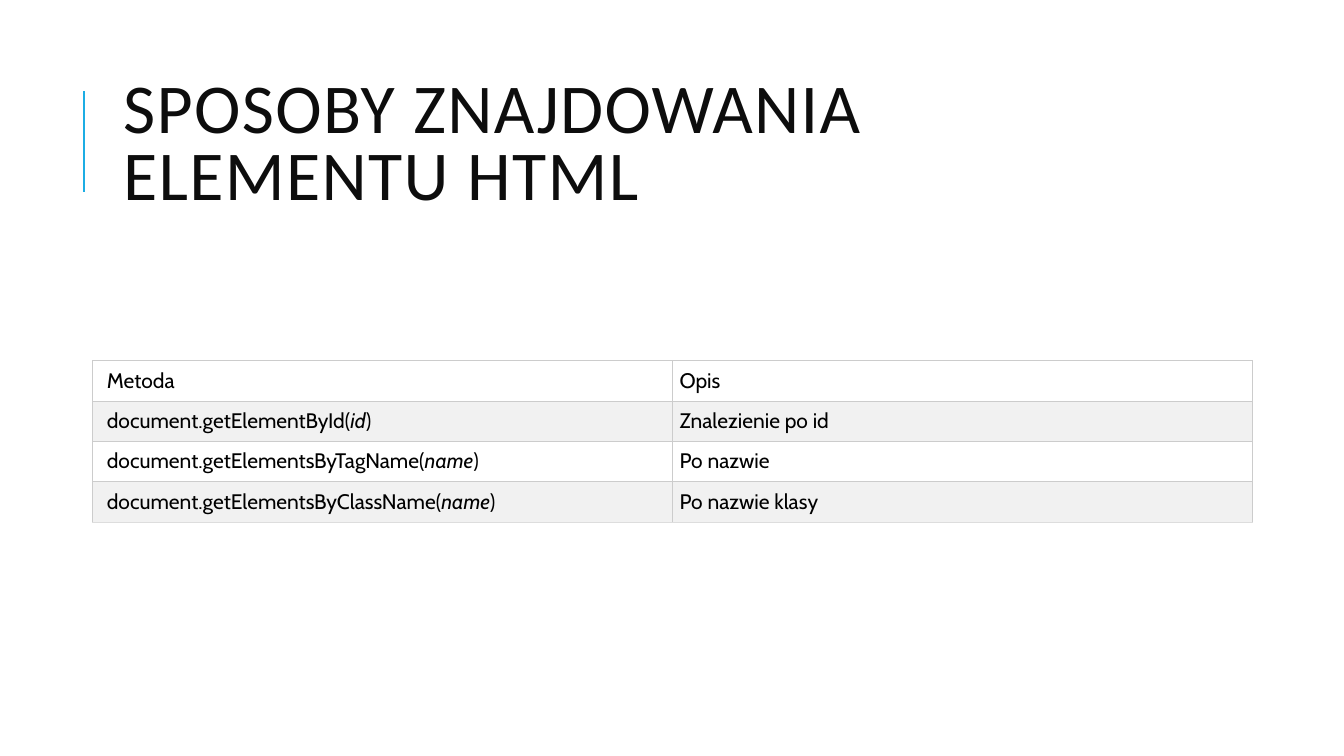
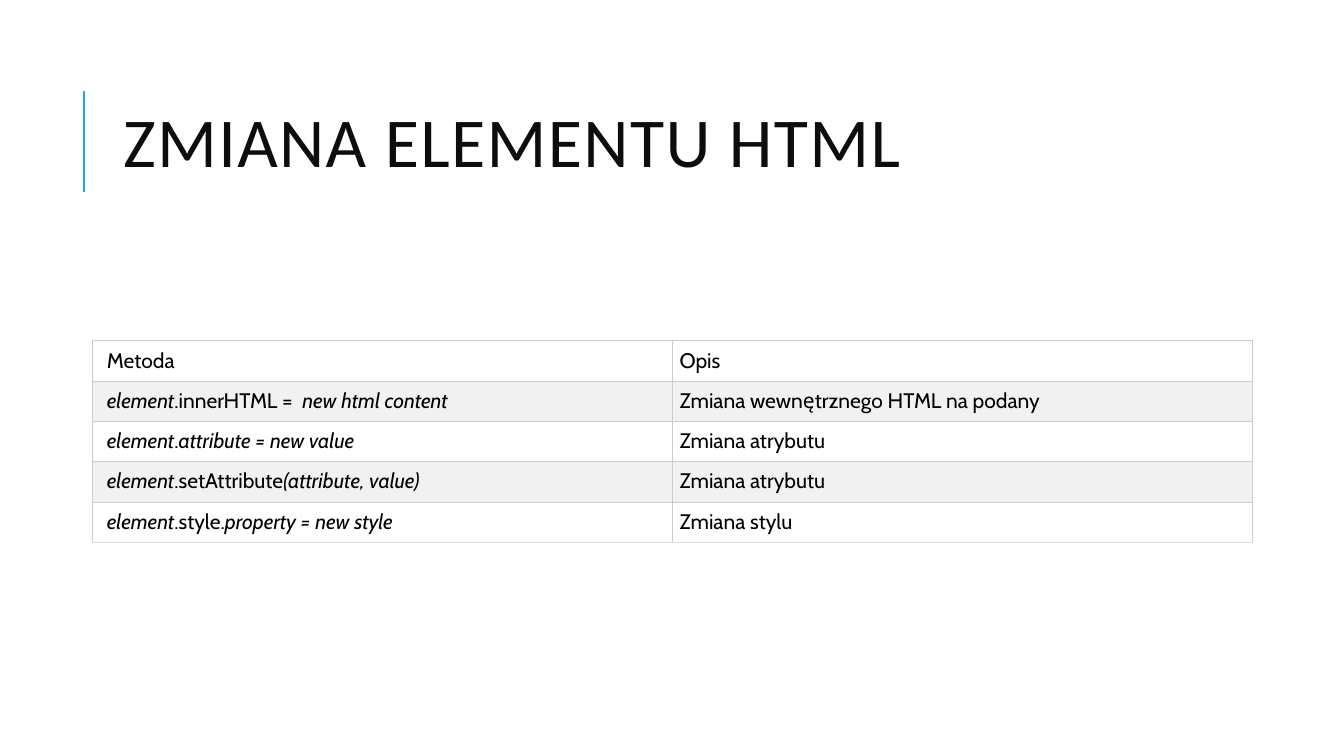
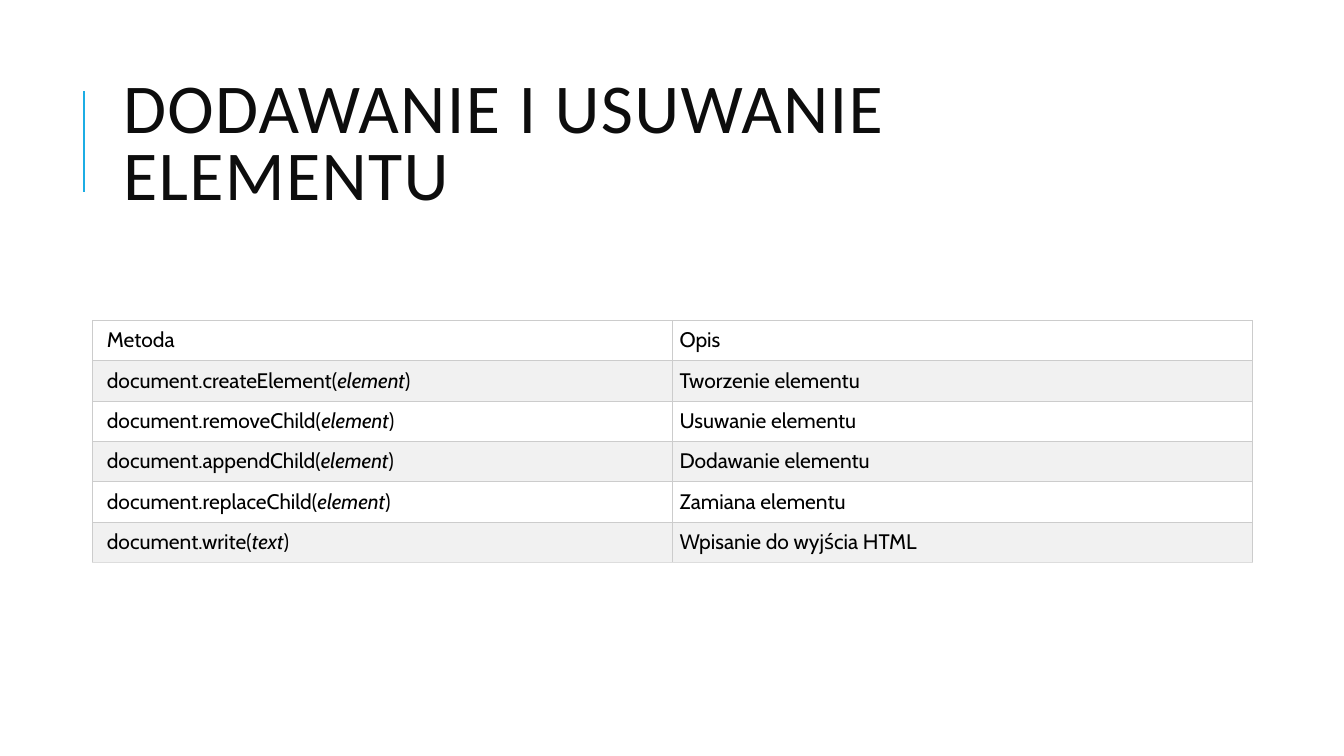
import pptx
import pptx.dml.color
import pptx.enum.shapes
import pptx.enum.text
import pptx.oxml
import pptx.oxml.ns
import pptx.util

Inches = pptx.util.Inches
Pt = pptx.util.Pt
RGBColor = pptx.dml.color.RGBColor

# Shared look
ACCENT = RGBColor(0x1C, 0xAD, 0xE4)
DARK = RGBColor(0x0D, 0x0D, 0x0D)
BLACK = RGBColor(0x00, 0x00, 0x00)
FILLS = [RGBColor(0xFF, 0xFF, 0xFF), RGBColor(0xF1, 0xF1, 0xF1)]
EDGE = RGBColor(0xCC, 0xCC, 0xCC)
LAST = RGBColor(0xDD, 0xDD, 0xDD)
LEFT, WIDTH, ROW, MIDDLE = 0.92, 11.5, 0.4, 4.38

# Each row: method, description; *stars* mark italics
HEAD = ("Metoda", "Opis")
SLIDES = [
    ("SPOSOBY ZNAJDOWANIA ELEMENTU HTML", [
        ("document.getElementById(*id*)", "Znalezienie po id"),
        ("document.getElementsByTagName(*name*)", "Po nazwie"),
        ("document.getElementsByClassName(*name*)", "Po nazwie klasy"),
    ]),
    ("ZMIANA ELEMENTU HTML", [
        ("*element*.innerHTML =  *new html content*",
         "Zmiana wewnętrznego HTML na podany"),
        ("*element*.*attribute = new value*", "Zmiana atrybutu"),
        ("*element*.setAttribute*(attribute, value)*", "Zmiana atrybutu"),
        ("*element*.style.*property = new style*", "Zmiana stylu"),
    ]),
    ("DODAWANIE I USUWANIE ELEMENTU", [
        ("document.createElement(*element*)", "Tworzenie elementu"),
        ("document.removeChild(*element*)", "Usuwanie elementu"),
        ("document.appendChild(*element*)", "Dodawanie elementu"),
        ("document.replaceChild(*element*)", "Zamiana elementu"),
        ("document.write(*text*)", "Wpisanie do wyjścia HTML"),
    ]),
]


def write(frame, text, font, size, color, space=None, track=None):
    para = frame.paragraphs[0]
    para.alignment = pptx.enum.text.PP_ALIGN.LEFT
    para.line_spacing = space
    for i, part in enumerate(text.split("*")):
        if not part:
            continue
        run = para.add_run()
        run.text = part
        run.font.name = font
        run.font.size = Pt(size)
        run.font.color.rgb = color
        if i % 2:
            run.font.italic = True
        if track:
            run.font._element.set("spc", str(track * 100))


def border(cell, side, color):
    cell._tc.get_or_add_tcPr().append(pptx.oxml.parse_xml(
        f'<a:ln{side} {pptx.oxml.ns.nsdecls("a")} w="{Pt(0.75)}"><a:solidFill>'
        f'<a:srgbClr val="{color}"/></a:solidFill></a:ln{side}>'))


deck = pptx.Presentation()
deck.slide_width = Inches(13.33)
deck.slide_height = Inches(7.5)

for heading, body in SLIDES:
    slide = deck.slides.add_slide(deck.slide_layouts[5])

    # Accent line beside the title
    line = slide.shapes.add_connector(
        pptx.enum.shapes.MSO_CONNECTOR.STRAIGHT,
        Inches(0.83), Inches(1.9), Inches(0.83), Inches(0.9))
    line.line.color.rgb = ACCENT
    line.line.width = Pt(1.5)
    line._element.spPr.append(pptx.oxml.parse_xml(
        f'<a:effectLst {pptx.oxml.ns.nsdecls("a")}/>'))

    # Title
    title = slide.shapes.title
    title.left, title.top = Inches(1.12), Inches(0.64)
    title.width, title.height = Inches(10.63), Inches(1.64)
    frame = title.text_frame
    frame.word_wrap = True
    frame.auto_size = pptx.enum.text.MSO_AUTO_SIZE.NONE
    frame.vertical_anchor = pptx.enum.text.MSO_ANCHOR.MIDDLE
    write(frame, heading, "Calibri", 50, DARK, space=0.8, track=1)

    # Table, centred on a fixed height
    rows = [HEAD] + body
    high = ROW * len(rows)
    table = slide.shapes.add_table(
        len(rows), 2, Inches(LEFT), Inches(MIDDLE - high / 2),
        Inches(WIDTH), Inches(high)).table
    table.first_row = table.horz_banding = False
    for r, row in enumerate(rows):
        for c, text in enumerate(row):
            cell = table.cell(r, c)
            cell.margin_left = Inches(0.07 if c else 0.14)
            cell.margin_right = Inches(0.07)
            cell.margin_top = cell.margin_bottom = Inches(0.07)
            for side in "LRT":
                border(cell, side, EDGE)
            border(cell, "B", LAST if r == len(body) else EDGE)
            cell.fill.solid()
            cell.fill.fore_color.rgb = FILLS[r % 2]
            write(cell.text_frame, text, "Cabin", 15, BLACK)

deck.save("out.pptx")
